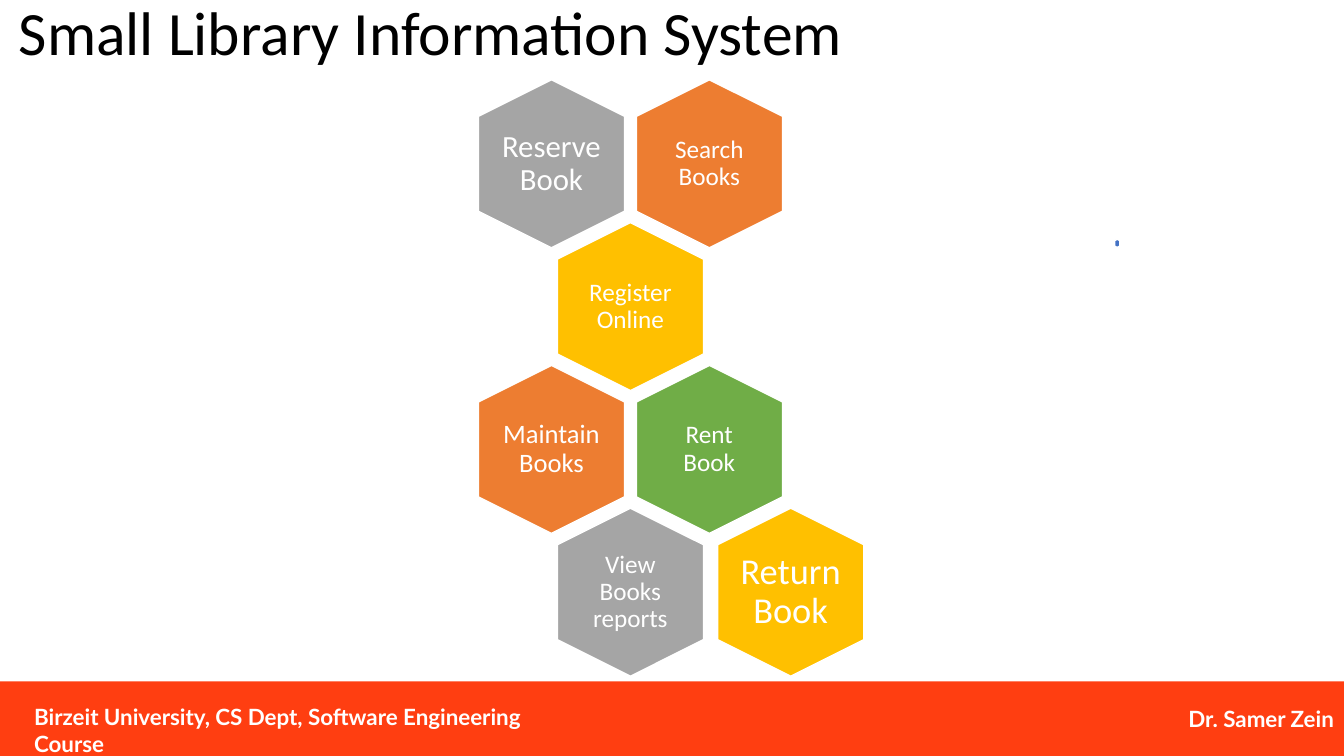
from pptx import Presentation
from pptx.dml.color import RGBColor
from pptx.enum.shapes import MSO_SHAPE
from pptx.enum.text import MSO_ANCHOR, PP_ALIGN
from pptx.util import Pt

HEXAGON, RECTANGLE = MSO_SHAPE.HEXAGON, MSO_SHAPE.RECTANGLE
TOP, MIDDLE = MSO_ANCHOR.TOP, MSO_ANCHOR.MIDDLE
LEFT, CENTER, RIGHT = PP_ALIGN.LEFT, PP_ALIGN.CENTER, PP_ALIGN.RIGHT

# Content
TITLE = "Small Library Information System"
COURSE = "Birzeit University, CS Dept, Software Engineering Course"
LECTURER = "Dr. Samer Zein"
ORANGE, GRAY, YELLOW, GREEN = "ED7D31", "A5A5A5", "FFC000", "70AD47"
WHITE, BLACK, RED, BLUE = "FFFFFF", "000000", "FF3E11", "4472C4"
# Use case, column (in half cells), row, fill, text size, text inset
USE_CASES = [
    ("Search Books", 2, 0, ORANGE, 18, 5),
    ("Reserve Book", 0, 0, GRAY, 22, 0),
    ("Register Online", 1, 1, YELLOW, 18, 5),
    ("Rent Book", 2, 2, GREEN, 18, 5),
    ("Maintain Books", 0, 2, ORANGE, 19, 0),
    ("View Books reports", 1, 3, GRAY, 18, 5),
    ("Return Book", 3.03, 3, YELLOW, 26, 0),
]

# Honeycomb geometry, in points
FIRST_X, FIRST_Y = 393.9, 117
HALF_CELL, ROW_PITCH = 56.4, 102
CELL_LENGTH, CELL_BREADTH = 120, 104.4
LABEL_WIDTH, LABEL_HEIGHT = 72, 82.8

prs = Presentation()
prs.slide_width, prs.slide_height = Pt(960), Pt(540)
slide = prs.slides.add_slide(prs.slide_layouts[6])


def color(value):
    return RGBColor.from_string(value)


def add_filled(preset, left, top, width, height, fill):
    shape = slide.shapes.add_shape(preset, Pt(left), Pt(top), Pt(width), Pt(height))
    shape.shadow.inherit = False
    shape.fill.solid()
    shape.fill.fore_color.rgb = color(fill)
    return shape


def add_hexagon(x, y, length, breadth, fill):
    """Place a hexagon standing on its point, centred at x, y."""
    cell = add_filled(HEXAGON, x - length / 2, y - breadth / 2, length, breadth, fill)
    cell.rotation = 90
    cell.adjustments[0] = 0.25
    cell.line.color.rgb = color(WHITE)
    cell.line.width = Pt(1)


def write(shape, text, size, font, ink=WHITE, bold=False, align=LEFT,
          anchor=MIDDLE, spacing=1.0, inset=None):
    frame = shape.text_frame
    frame.word_wrap = True
    frame.vertical_anchor = anchor
    if inset is not None:
        frame.margin_left = frame.margin_right = Pt(inset)
        frame.margin_top = frame.margin_bottom = Pt(inset)
    line = frame.paragraphs[0]
    line.text = text
    line.alignment = align
    line.line_spacing = spacing
    line.font.size, line.font.name, line.font.bold = Pt(size), font, bold
    line.font.color.rgb = color(ink)


def add_text(left, top, width, height, text, size, font, **style):
    box = slide.shapes.add_textbox(Pt(left), Pt(top), Pt(width), Pt(height))
    write(box, text, size, font, **style)


# Title
add_text(6.5, -3.6, 828, 57.6, TITLE, 44, "Calibri", ink=BLACK, spacing=0.9)

# Footer
footer = add_filled(RECTANGLE, 0, 486.7, 960, 53.3, RED)
footer.line.fill.background()
write(footer, LECTURER, 16, "Lato", bold=True, align=RIGHT)
add_text(17.3, 499, 414, 26.6, COURSE, 16, "Lato", bold=True, anchor=TOP)

# Honeycomb of use cases
for use_case, column, row, fill, size, inset in USE_CASES:
    x = FIRST_X + column * HALF_CELL
    y = FIRST_Y + row * ROW_PITCH
    add_hexagon(x, y, CELL_LENGTH, CELL_BREADTH, fill)
    add_text(x - LABEL_WIDTH / 2, y - LABEL_HEIGHT / 2, LABEL_WIDTH, LABEL_HEIGHT,
             use_case, size, "Calibri", align=CENTER, spacing=0.9, inset=inset)

# Small blue cell at the right
add_hexagon(798, 173.8, 5.8, 3.6, BLUE)

prs.save("out.pptx")
